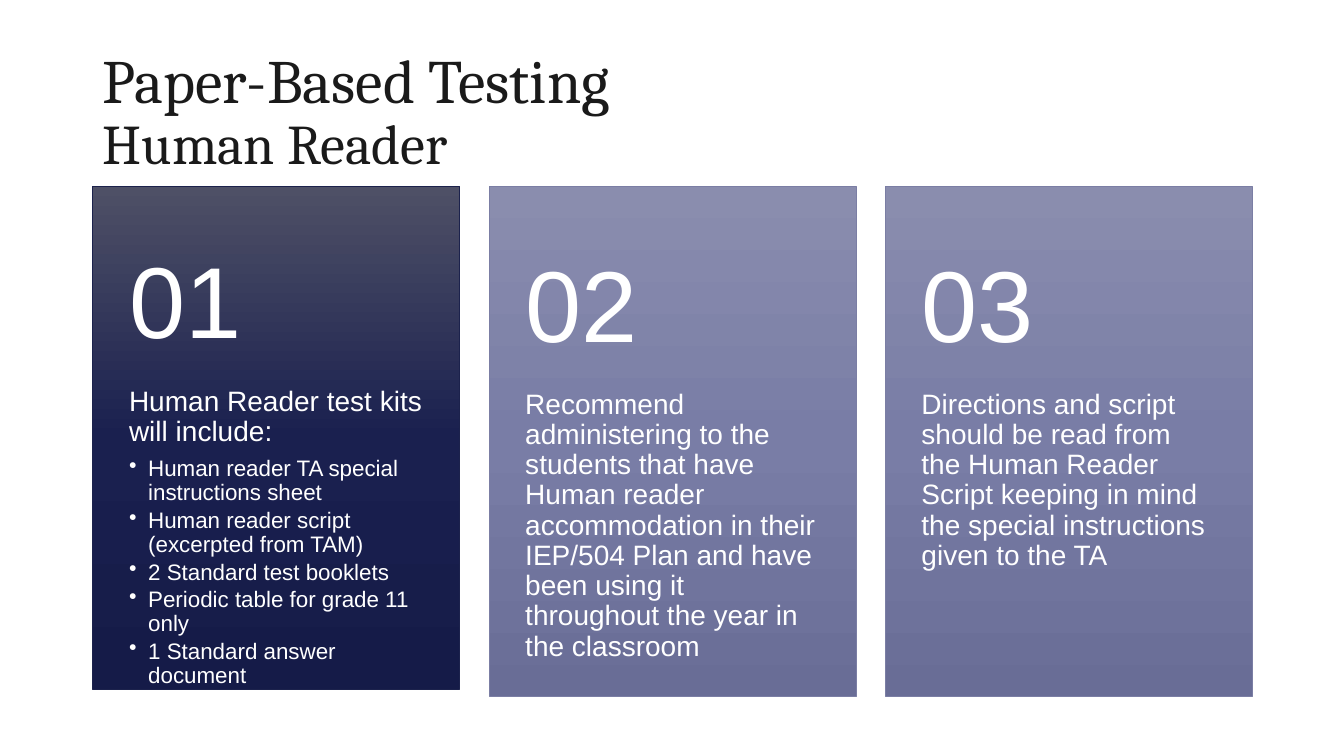
from copy import deepcopy

from lxml.etree import SubElement
from pptx import Presentation
from pptx.dml.color import RGBColor
from pptx.enum.shapes import MSO_SHAPE
from pptx.enum.text import MSO_ANCHOR
from pptx.oxml.ns import qn
from pptx.util import Inches, Pt

THEME = {
    "title_font": "Cambria", "body_font": "Arial",
    "title_color": "1A1A1A", "card_text": "FFFFFF",
    "title": 44, "subtitle": 40, "number": 72, "body": 20, "bullet": 16,
    "dark": {"stops": ["4E5066", "1A204F", "151B48"], "line": "1C224C"},
    "light": {"stops": ["8A8DAE", "797DA6", "696D96"], "line": "7B7EA4"},
}
LEFT, CARD_TOP, CARD_WIDTH, COLUMN_STEP = 0.92, 1.85, 3.64, 3.93
PADDING, HANG = 0.36, 0.19
NUMBER_HEIGHT = 1.75

CARDS = [
    {"look": "dark", "height": 4.99, "number_top": 2.16, "body_top": 3.84,
     "lead": "Human Reader test kits will include:",
     "bullets": ["Human reader TA special instructions sheet",
                 "Human reader script (excerpted from TAM)",
                 "2 Standard test booklets",
                 "Periodic table for grade 11 only",
                 "1 Standard answer document"]},
    {"look": "light", "height": 5.06, "number_top": 2.2, "body_top": 3.87,
     "lead": "Recommend administering to the students that have Human reader "
             "accommodation in their IEP/504 Plan and have been using it "
             "throughout the year in the classroom",
     "bullets": []},
    {"look": "light", "height": 5.06, "number_top": 2.2, "body_top": 3.87,
     "lead": "Directions and script should be read from the Human Reader "
             "Script keeping in mind the special instructions given to the TA",
     "bullets": []},
]

deck = Presentation()
deck.slide_width, deck.slide_height = Inches(13.33), Inches(7.5)
slide = deck.slides.add_slide(deck.slide_layouts[6])


def add_text_frame(box, insets, anchor):
    """Add a wrapping text box; box and insets are in inches."""
    frame = slide.shapes.add_textbox(*map(Inches, box)).text_frame
    frame.word_wrap = True
    frame.vertical_anchor = anchor
    for side, inset in zip(("left", "top", "right", "bottom"), insets):
        setattr(frame, f"margin_{side}", Inches(inset))
    return frame


def write(paragraph, text, size, font, color, space_share=0):
    """Add a run; space_share is the space after as a share of its size."""
    paragraph.line_spacing = 0.9
    paragraph.space_after = Pt(size * space_share)
    run = paragraph.add_run()
    run.text = text
    formats = {"size": Pt(size), "name": font}
    for attribute, value in formats.items():
        setattr(run.font, attribute, value)
    run.font.color.rgb = RGBColor.from_string(color)


# Title
heading = add_text_frame((LEFT, 0.4, 11.5, 1.45), (0.1, 0.05, 0.1, 0.05),
                         MSO_ANCHOR.MIDDLE).paragraphs[0]
title_style = (THEME["title_font"], THEME["title_color"])
write(heading, "Paper-Based Testing", THEME["title"], *title_style)
heading.add_line_break()
write(heading, "Human Reader", THEME["subtitle"], *title_style)

# Numbered cards
card_style = (THEME["body_font"], THEME["card_text"])
for column, card in enumerate(CARDS):
    left = LEFT + column * COLUMN_STEP
    look = THEME[card["look"]]
    panel = slide.shapes.add_shape(
        MSO_SHAPE.RECTANGLE,
        *map(Inches, (left, CARD_TOP, CARD_WIDTH, card["height"])))
    panel.shadow.inherit = False
    panel.line.color.rgb = RGBColor.from_string(look["line"])
    panel.line.width = Pt(0.5)
    panel.fill.gradient()
    panel.fill.gradient_angle = 270
    stop_list = next(panel.element.iter(qn("a:gsLst")))
    stop_list.append(deepcopy(stop_list[0]))
    for index, stop in enumerate(panel.fill.gradient_stops):
        stop.position = index / 2
        stop.color.rgb = RGBColor.from_string(look["stops"][index])

    body = add_text_frame(
        (left, card["body_top"], CARD_WIDTH,
         CARD_TOP + card["height"] - card["body_top"]),
        (PADDING, 0, PADDING, PADDING), MSO_ANCHOR.TOP)
    write(body.paragraphs[0], card["lead"], THEME["body"], *card_style, 0.35)
    for item in card["bullets"]:
        entry = body.add_paragraph()
        entry.level = 1
        properties = entry._p.get_or_add_pPr()
        properties.set("marL", str(Inches(HANG)))
        properties.set("indent", str(-Inches(HANG)))
        SubElement(properties, qn("a:buChar"), char="•")
        write(entry, item, THEME["bullet"], *card_style, 0.15)

    number = add_text_frame(
        (left, card["number_top"], CARD_WIDTH, NUMBER_HEIGHT),
        (PADDING, PADDING / 2, PADDING, PADDING / 2), MSO_ANCHOR.MIDDLE)
    write(number.paragraphs[0], f"{column + 1:02d}", THEME["number"],
          *card_style, 0.35)

deck.save("out.pptx")
